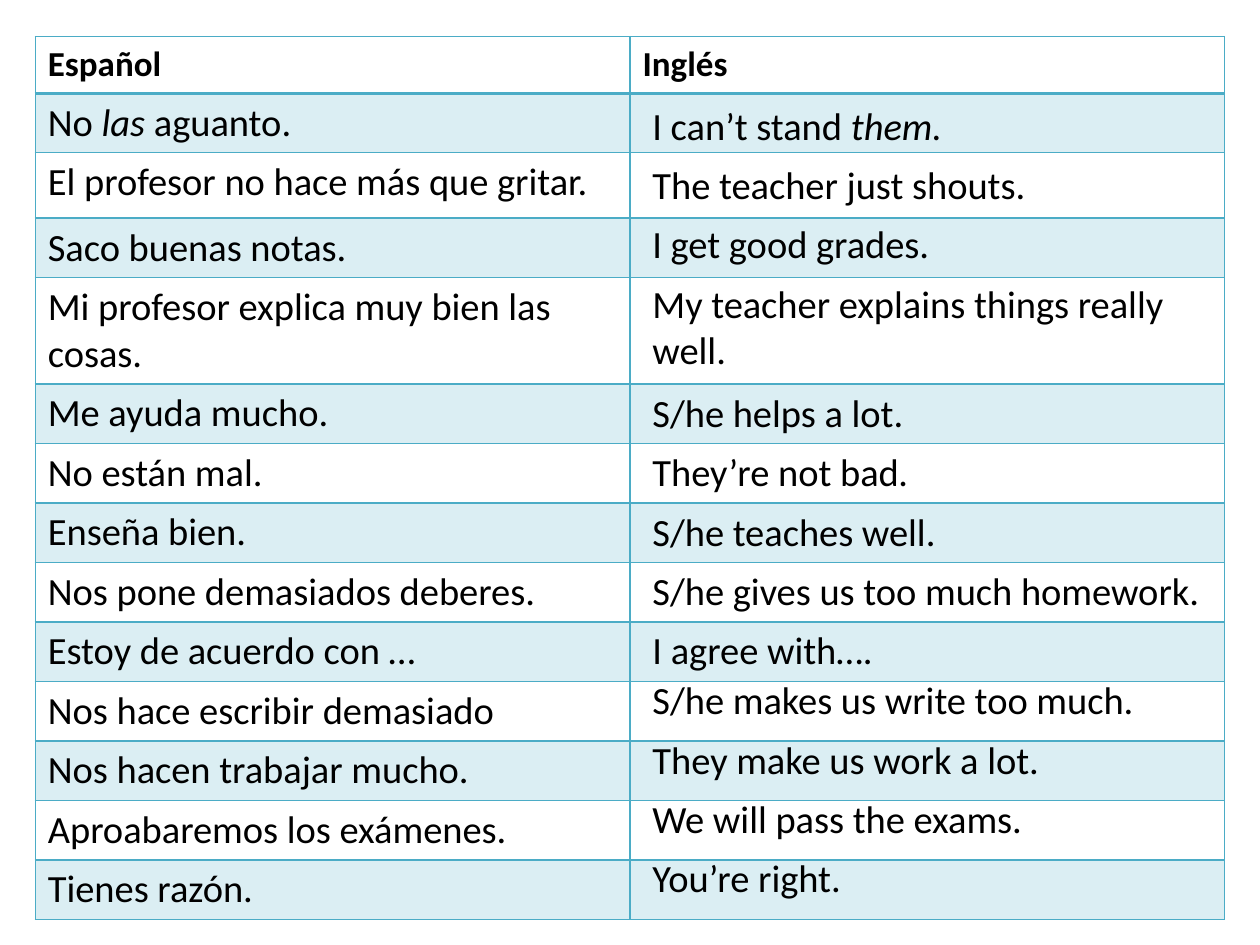
from lxml import etree
from pptx import Presentation
from pptx.dml.color import RGBColor
from pptx.enum.text import MSO_AUTO_SIZE
from pptx.oxml import parse_xml
from pptx.oxml.ns import nsdecls, qn
from pptx.util import Inches, Pt

FIT_SHAPE = MSO_AUTO_SIZE.SHAPE_TO_FIT_TEXT
COLORS = {"text": "000000", "accent": "4BACC6"}
BAND_ALPHA = "20000"  # 20 % opaque
BODY = {"name": "Calibri", "size": Pt(22), "bold": False}
HEADER = {"name": "Calibri", "size": Pt(20), "bold": True}

# Asterisks enclose italic words
HEADINGS = ["Español", "Inglés"]
SPANISH = [
    "No *las *aguanto.",
    "El profesor no hace más que gritar.",
    "Saco buenas notas.",
    "Mi profesor explica muy bien las cosas.",
    "Me ayuda mucho.",
    "No están mal.",
    "Enseña bien.",
    "Nos pone demasiados deberes.",
    "Estoy de acuerdo con …",
    "Nos hace escribir demasiado",
    "Nos hacen trabajar mucho.",
    "Aproabaremos los exámenes.",
    "Tienes razón.",
]
# Each group of translations: top of its first box, then its sentences
ENGLISH_GROUPS = [
    (0.76, ["I can’t stand *them.*", "The teacher just shouts.", "I get good grades.",
            "My teacher explains things really well."]),
    (3.04, ["S/he helps a lot.", "They’re not bad*.*", "S/he teaches well.",
            "S/he gives us too much homework.", "I agree with…."]),
    (5.32, ["S/he makes us write too much.", "They make us work a lot.",
            "We will pass the exams.", "You’re right."]),
]
BOX_PITCH = 0.47
NARROW_UNTIL = 4.4  # boxes above this height are narrower
SPECIAL_ROWS = {2: 0.52, 4: 0.83}


def write_text(text_frame, text, formats):
    paragraph = text_frame.paragraphs[0]
    for index, part in enumerate(text.split("*")):
        if not part:
            continue
        run = paragraph.add_run()
        run.text = part
        for name, value in formats.items():
            setattr(run.font, name, value)
        run.font.italic = index % 2 == 1
        run.font.color.rgb = RGBColor.from_string(COLORS["text"])


def style_cell(cell, row):
    # Every second row is a translucent band
    if row % 2:
        cell.fill.solid()
        cell.fill.fore_color.rgb = RGBColor.from_string(COLORS["accent"])
        color = cell._tc.tcPr.find(".//" + qn("a:srgbClr"))
        etree.SubElement(color, qn("a:alpha"), val=BAND_ALPHA)
    else:
        cell.fill.background()
    # The line under the header is thicker
    thick_side = {0: "B", 1: "T"}.get(row)
    for position, side in enumerate("LRTB"):
        width = Pt(2 if side == thick_side else 1)
        cell._tc.tcPr.insert(position, parse_xml(
            f'<a:ln{side} {nsdecls("a")} w="{width}"><a:solidFill>'
            f'<a:srgbClr val="{COLORS["accent"]}"/></a:solidFill></a:ln{side}>'))


presentation = Presentation()
presentation.slide_width = Inches(10)
presentation.slide_height = Inches(7.5)
slide = presentation.slides.add_slide(presentation.slide_layouts[6])

# Vocabulary table
row_count = len(SPANISH) + 1
table = slide.shapes.add_table(
    row_count, 2, Inches(0.28), Inches(0.29), Inches(9.45), Inches(6.93)).table
table.horz_banding = False
table.first_row = False
for column in table.columns:
    column.width = Inches(4.72)
for row in range(row_count):
    table.rows[row].height = Inches(SPECIAL_ROWS.get(row, 0.45))
    for column in range(2):
        style_cell(table.cell(row, column), row)
for column, heading in enumerate(HEADINGS):
    write_text(table.cell(0, column).text_frame, heading, HEADER)
for row, sentence in enumerate(SPANISH, start=1):
    write_text(table.cell(row, 0).text_frame, sentence, BODY)

# English translations over the empty column
for group_top, sentences in ENGLISH_GROUPS:
    for index, sentence in enumerate(sentences):
        top = group_top + index * BOX_PITCH
        width = 4.33 if top < NARROW_UNTIL else 4.72
        height = 0.84 if "explains" in sentence else 0.47
        box = slide.shapes.add_textbox(
            Inches(5.08), Inches(top), Inches(width), Inches(height))
        box.text_frame.word_wrap = True
        box.text_frame.auto_size = FIT_SHAPE
        write_text(box.text_frame, sentence, BODY)

presentation.save("out.pptx")
